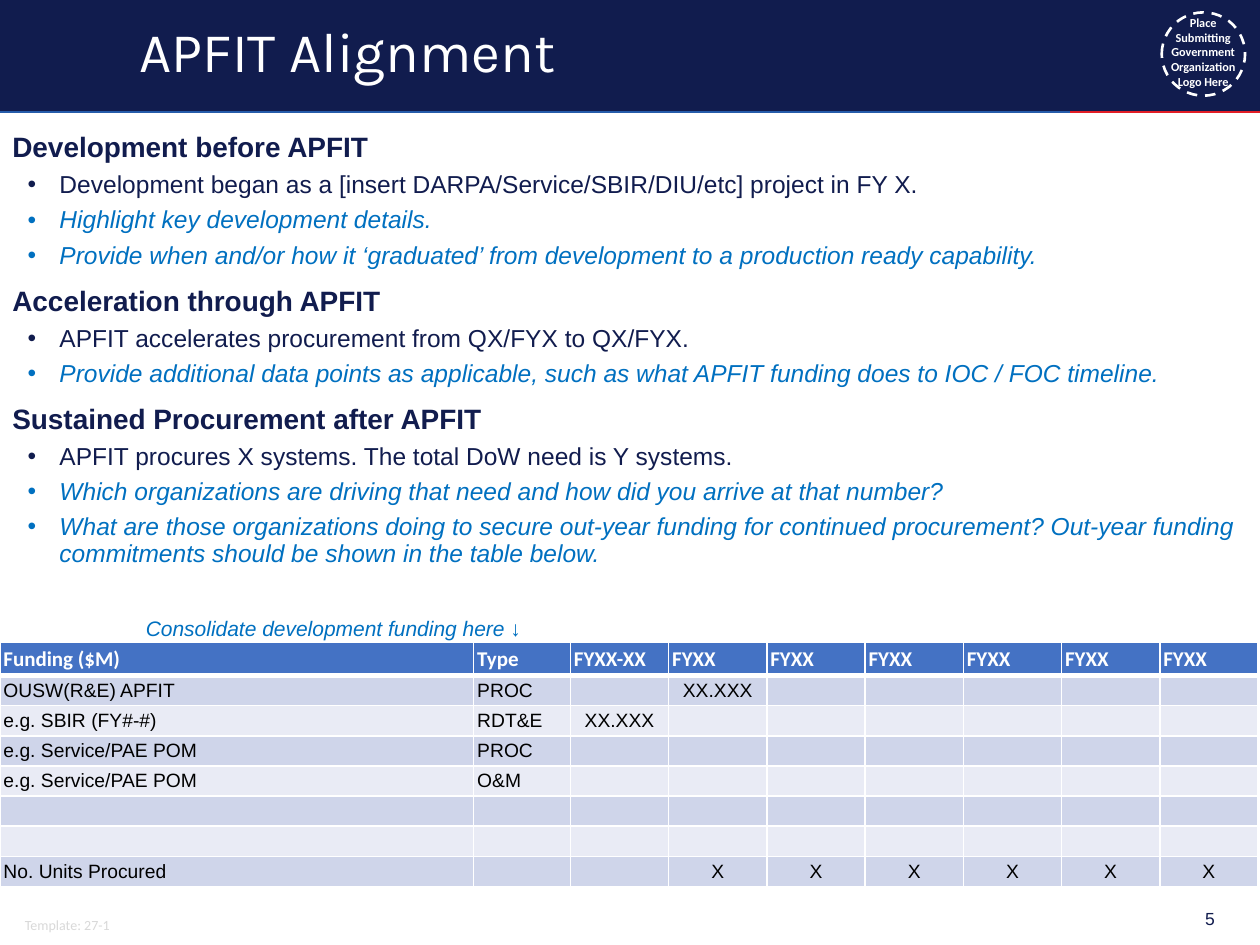
from lxml.etree import SubElement
from pptx import Presentation
from pptx.dml.color import RGBColor
from pptx.enum.dml import MSO_LINE
from pptx.enum.shapes import MSO_CONNECTOR, MSO_SHAPE
from pptx.enum.text import MSO_ANCHOR as Anchor, PP_ALIGN as Align
from pptx.oxml.ns import qn
from pptx.util import Cm, Pt

NAVY, BLUE, WHITE, BLACK = "111C4E", "0070C0", "FFFFFF", "000000"

# A plain string is a heading; a pair is a bullet and whether it is guidance.
ALIGNMENT = [
    "Development before APFIT",
    ("Development began as a [insert DARPA/Service/SBIR/DIU/etc] project in FY X.", False),
    ("Highlight key development details.", True),
    ("Provide when and/or how it ‘graduated’ from development to a production ready capability.", True),
    "Acceleration through APFIT",
    ("APFIT accelerates procurement from QX/FYX to QX/FYX.", False),
    ("Provide additional data points as applicable, such as what APFIT funding does to IOC / FOC timeline.", True),
    "Sustained Procurement after APFIT",
    ("APFIT procures X systems. The total DoW need is Y systems.", False),
    ("Which organizations are driving that need and how did you arrive at that number?", True),
    ("What are those organizations doing to secure out-year funding for continued procurement? "
     "Out-year funding commitments should be shown in the table below.", True),
]

FUNDING = [
    ["Funding ($M)", "Type", "FYXX-XX"] + ["FYXX"] * 6,
    ["OUSW(R&E) APFIT", "PROC", "", "XX.XXX"],
    ["e.g. SBIR (FY#-#)", "RDT&E", "XX.XXX"],
    ["e.g. Service/PAE POM", "PROC"],
    ["e.g. Service/PAE POM", "O&M"],
    [],
    [],
    ["No. Units Procured", "", ""] + ["X"] * 6,
]
COLUMN_WIDTHS = [9.55, 1.95] + [1.98] * 7


def color(value):
    return RGBColor.from_string(value)


def style_font(font, size, fill, name="Arial", bold=False, italic=False):
    font.size, font.name, font.bold, font.italic = Pt(size), name, bold, italic
    font.color.rgb = color(fill)


def add_bullet(para):
    properties = para._p.get_or_add_pPr()
    properties.set("lvl", "1")
    properties.set("marL", str(Cm(0.95)))
    properties.set("indent", str(-Cm(0.64)))
    SubElement(properties, qn("a:buFont")).set("typeface", "Arial")
    SubElement(properties, qn("a:buChar")).set("char", "•")


def add_borders(cell, bottom):
    properties = cell._tc.get_or_add_tcPr()
    for side, width in (("L", 1), ("R", 1), ("T", 1), ("B", bottom)):
        line = SubElement(properties, qn(f"a:ln{side}"), w=str(Pt(width)))
        fill = SubElement(line, qn("a:solidFill"))
        SubElement(fill, qn("a:srgbClr"), val=WHITE)


class SlideBuilder:
    """Draws styled elements on one slide; lengths are centimetres."""

    def __init__(self, page):
        self.page = page

    def shape(self, preset, left, top, width, height, fill=None):
        shape = self.page.shapes.add_shape(preset, Cm(left), Cm(top), Cm(width), Cm(height))
        shape.shadow.inherit = False
        if fill:
            shape.fill.solid()
            shape.fill.fore_color.rgb = color(fill)
            shape.line.fill.background()
        else:
            shape.fill.background()
        return shape

    def rule(self, start, end, top, fill):
        line = self.page.shapes.add_connector(
            MSO_CONNECTOR.STRAIGHT, Cm(start), Cm(top), Cm(end), Cm(top))
        line.line.color.rgb = color(fill)
        line.line.width = Pt(1)
        SubElement(line._element.spPr, qn("a:effectLst"))

    def frame(self, left, top, width, height, anchor=Anchor.TOP):
        box = self.page.shapes.add_textbox(Cm(left), Cm(top), Cm(width), Cm(height))
        box.text_frame.word_wrap = True
        box.text_frame.vertical_anchor = anchor
        return box.text_frame

    def label(self, text, place, size, fill, align=Align.LEFT, anchor=Anchor.TOP, **style):
        frame = self.frame(*place, anchor)
        frame.text = text
        para = frame.paragraphs[0]
        para.alignment = align
        style_font(para.runs[0].font, size, fill, **style)
        return para

    def outline(self, items, place):
        """Adds headings with bullets below them."""
        frame = self.frame(*place)
        for index, item in enumerate(items):
            para = frame.paragraphs[0] if index == 0 else frame.add_paragraph()
            heading = isinstance(item, str)
            para.text, guidance = (item, False) if heading else item
            para.line_spacing = 0.9
            if index:
                para.space_before = Pt(10 if heading else 5)
            if not heading:
                add_bullet(para)
            style_font(para.runs[0].font, 16 if heading else 14,
                       BLUE if guidance else NAVY, bold=heading, italic=guidance)

    def table(self, rows, widths, left, top, header_height, row_height):
        height = header_height + row_height * (len(rows) - 1)
        table = self.page.shapes.add_table(
            len(rows), len(widths), Cm(left), Cm(top), Cm(sum(widths)), Cm(height)).table
        for column, width in zip(table.columns, widths):
            column.width = Cm(width)
        for r, values in enumerate(rows):
            table.rows[r].height = Cm(row_height if r else header_height)
            for c in range(len(widths)):
                self.cell(table.cell(r, c), values[c] if c < len(values) else "", r, c)

    def cell(self, cell, text, row, column):
        header = row == 0
        add_borders(cell, 3 if header else 1)
        cell.fill.solid()
        cell.fill.fore_color.rgb = color("4472C4" if header else "CFD5EA" if row % 2 else "E9EBF5")
        cell.margin_left = cell.margin_right = cell.margin_top = cell.margin_bottom = Cm(0.07)
        cell.vertical_anchor = Anchor.MIDDLE
        para = cell.text_frame.paragraphs[0]
        if not text:
            SubElement(para._p, qn("a:endParaRPr"), sz="1100")
            return
        para.text = text
        para.alignment = Align.CENTER if column > 1 and not header else Align.LEFT
        font = para.runs[0].font
        if header:
            style_font(font, 12, WHITE, "Calibri", bold=True)
        else:
            style_font(font, 11, BLACK)


def main():
    deck = Presentation()
    deck.slide_width, deck.slide_height = Cm(25.4), Cm(19.05)
    slide = SlideBuilder(deck.slides.add_slide(deck.slide_layouts[6]))

    slide.shape(MSO_SHAPE.RECTANGLE, 0, 0, 25.4, 2.26, NAVY)
    slide.rule(0, 21.56, 2.26, "265CAA")
    slide.rule(25.4, 21.56, 2.26, "E21E26")
    slide.label("Template: 27-1", (0.25, 18.36, 2.49, 0.6), 8, "D9D9D9", name="Calibri")
    slide.label("Place Submitting Government Organization Logo Here",
                (23.29, 0.18, 1.93, 1.75), 7, WHITE, Align.CENTER, name="Calibri", bold=True)
    ring = slide.shape(MSO_SHAPE.OVAL, 23.42, 0.25, 1.68, 1.68)
    ring.line.color.rgb = color(WHITE)
    ring.line.width = Pt(1.5)
    ring.line.dash_style = MSO_LINE.DASH

    title = slide.label("APFIT Alignment", (2.57, 0.15, 19.23, 1.88), 32, WHITE,
                        anchor=Anchor.MIDDLE, name="Karla")
    title.line_spacing = 0.9
    slide.label("5", (21.56, 18.01, 3.18, 1.02), 10, NAVY, Align.RIGHT, Anchor.MIDDLE)
    slide.table(FUNDING, COLUMN_WIDTHS, 0, 12.95, 0.67, 0.58)
    slide.label("Consolidate development funding here ↓", (2.69, 12.29, 9.32, 0.76),
                12, BLUE, italic=True)
    slide.outline(ALIGNMENT, (0, 2.57, 25.4, 9.58))
    deck.save("out.pptx")


if __name__ == "__main__":
    main()
